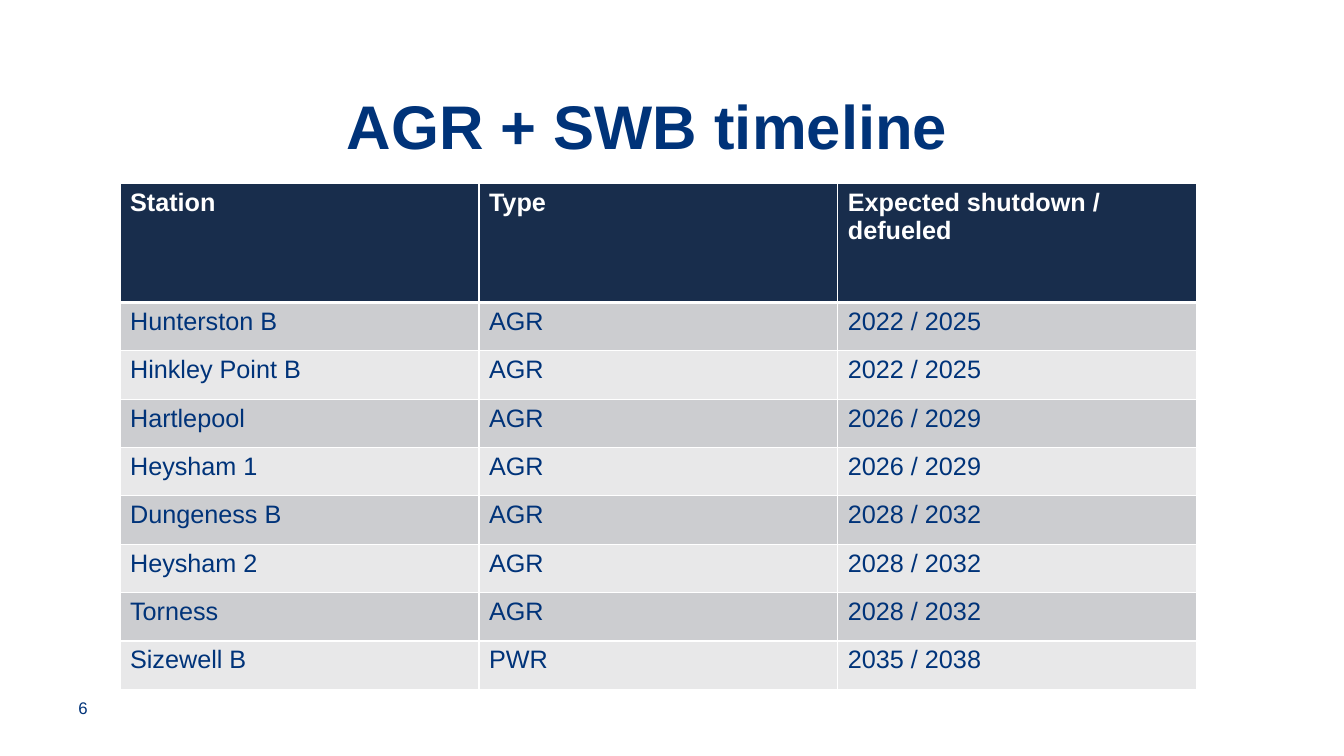
from typing import NamedTuple

from lxml.etree import SubElement
from pptx import Presentation
from pptx.dml.color import RGBColor
from pptx.enum.text import MSO_ANCHOR, MSO_AUTO_SIZE, PP_ALIGN
from pptx.oxml.ns import qn
from pptx.util import Inches, Pt

COLORS = {
    "blue": "003379",
    "navy": "182D4C",
    "white": "FFFFFF",
    "dark": "CCCDD0",
    "light": "E8E8E9",
}
FONT = "Arial"


class Plant(NamedTuple):
    station: str
    kind: str
    dates: str


HEADER = Plant("Station", "Type", "Expected shutdown / defueled")
PLANTS = [
    Plant("Hunterston B", "AGR", "2022 / 2025"),
    Plant("Hinkley Point B", "AGR", "2022 / 2025"),
    Plant("Hartlepool", "AGR", "2026 / 2029"),
    Plant("Heysham 1", "AGR", "2026 / 2029"),
    Plant("Dungeness B", "AGR", "2028 / 2032"),
    Plant("Heysham 2", "AGR", "2028 / 2032"),
    Plant("Torness", "AGR", "2028 / 2032"),
    Plant("Sizewell B", "PWR", "2035 / 2038"),
]


def add_run(para, text: str, size: float, color: str, bold: bool = False) -> None:
    run = para.add_run()
    run.text = text
    run.font.name = FONT
    run.font.size = Pt(size)
    run.font.bold = bold
    run.font.color.rgb = RGBColor.from_string(COLORS[color])


def add_borders(cell, top: float, bottom: float) -> None:
    """Draw white cell edges; widths are in points."""
    props = cell._tc.get_or_add_tcPr()
    for side, width in (("L", 1), ("R", 1), ("T", top), ("B", bottom)):
        line = SubElement(props, qn(f"a:ln{side}"), w=str(Pt(width)))
        fill = SubElement(line, qn("a:solidFill"))
        SubElement(fill, qn("a:srgbClr"), val=COLORS["white"])


def add_title(slide) -> None:
    title = slide.shapes.title
    title.left, title.top = Inches(3.34), Inches(0.85)
    title.width, title.height = Inches(9.03), Inches(0.88)
    frame = title.text_frame
    frame.auto_size = MSO_AUTO_SIZE.NONE
    frame.vertical_anchor = MSO_ANCHOR.MIDDLE
    para = frame.paragraphs[0]
    para.alignment = PP_ALIGN.LEFT
    para.line_spacing = 0.9
    add_run(para, "AGR + SWB timeline", 44, "blue", bold=True)


def add_plants(slide) -> None:
    rows = [HEADER, *PLANTS]
    table = slide.shapes.add_table(
        len(rows), len(HEADER),
        Inches(1.19), Inches(1.82), Inches(10.68), Inches(4.99),
    ).table
    for col in table.columns:
        col.width = Inches(3.56)
    for index, plant in enumerate(rows):
        head = index == 0
        table.rows[index].height = Inches(1.18 if head else 0.48)
        shade = "navy" if head else ("light", "dark")[index % 2]
        for cell, text in zip(table.rows[index].cells, plant):
            add_borders(cell, 3 if index == 1 else 1, 3 if head else 1)
            cell.fill.solid()
            cell.fill.fore_color.rgb = RGBColor.from_string(COLORS[shade])
            ink = "white" if head else "blue"
            add_run(cell.text_frame.paragraphs[0], text, 18, ink, bold=head)


def add_number(slide) -> None:
    box = slide.shapes.add_textbox(
        Inches(0.68), Inches(6.87), Inches(1.87), Inches(0.3)
    )
    box.text_frame.word_wrap = True
    add_run(box.text_frame.paragraphs[0], "6", 12, "blue")


def main() -> None:
    deck = Presentation()
    deck.slide_width, deck.slide_height = Inches(13.33), Inches(7.5)
    slide = deck.slides.add_slide(deck.slide_layouts[5])
    add_number(slide)
    add_plants(slide)
    add_title(slide)
    deck.save("out.pptx")


if __name__ == "__main__":
    main()
